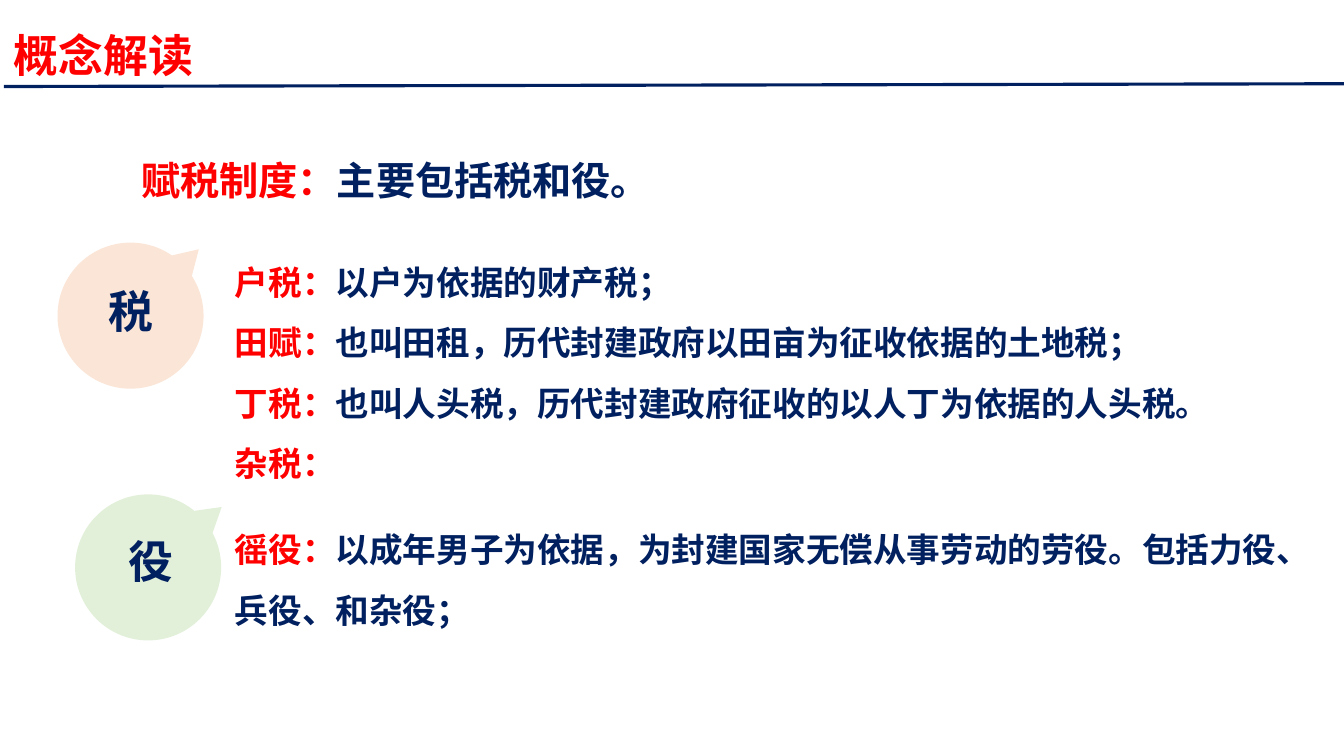
from dataclasses import dataclass
from itertools import pairwise
from math import cos, radians, sin, tan

from lxml import etree
from pptx import Presentation
from pptx.dml.color import RGBColor
from pptx.enum.shapes import MSO_CONNECTOR
from pptx.enum.text import MSO_ANCHOR, MSO_AUTO_SIZE, PP_ALIGN
from pptx.oxml.ns import qn
from pptx.shapes.autoshape import Shape
from pptx.slide import Slide
from pptx.util import Cm, Pt

RED = RGBColor(0xFF, 0x00, 0x00)
NAVY = RGBColor(0x00, 0x20, 0x60)
PEACH = RGBColor(0xFB, 0xE5, 0xD6)
GREEN = RGBColor(0xE2, 0xF0, 0xD9)

STRAIGHT = MSO_CONNECTOR.STRAIGHT
LEFT = PP_ALIGN.LEFT
CENTER = PP_ALIGN.CENTER
TOP = MSO_ANCHOR.TOP
MIDDLE = MSO_ANCHOR.MIDDLE
NO_FIT = MSO_AUTO_SIZE.NONE
GROW = MSO_AUTO_SIZE.SHAPE_TO_FIT_TEXT

BODY_FONT = "Noto Sans CJK SC"
TITLE_FONT = "Noto Sans CJK JP"
BUBBLE_RADIUS = 1.84
TIP_DISTANCE = 2.4
ARC_ANGLES = (-78.7, 0, 90, 180, 258.7)


@dataclass(frozen=True)
class Piece:
    text: str
    color: RGBColor


@dataclass(frozen=True)
class TextBlock:
    left: float
    top: float
    width: float
    height: float
    size: int
    paragraphs: list[list[Piece]]
    font: str = BODY_FONT
    line_spacing: float = 1.5
    wrap: bool = True
    align: PP_ALIGN = LEFT
    anchor: MSO_ANCHOR = TOP
    auto_size: MSO_AUTO_SIZE = GROW


@dataclass(frozen=True)
class Bubble:
    left: float
    top: float
    rotation: float
    fill: RGBColor
    label: str
    label_left: float
    label_top: float


def term(name: str, meaning: str = "") -> list[Piece]:
    pieces = [Piece(name, RED)]
    if meaning:
        pieces.append(Piece(meaning, NAVY))
    return pieces


TITLE = TextBlock(0.1, 0.57, 5.08, 1.62, 32, [term("概念解读")],
                  font=TITLE_FONT, line_spacing=1.0, wrap=False)
SYSTEM = TextBlock(3.31, 3.23, 14.35, 1.8, 28,
                   [term("赋税制度：", "主要包括税和役。")])
TAXES = TextBlock(5.67, 5.96, 26.04, 6.17, 24, [
    term("户税：", "以户为依据的财产税；"),
    term("田赋：", "也叫田租，历代封建政府以田亩为征收依据的土地税；"),
    term("丁税：", "也叫人头税，历代封建政府征收的以人丁为依据的人头税。"),
    term("杂税："),
])
LABOUR = TextBlock(5.67, 12.7, 27.36, 3.33, 24, [
    term("徭役：", "以成年男子为依据，为封建国家无偿从事劳动的劳役。"
         "包括力役、兵役、和杂役；"),
])
BUBBLES = [
    Bubble(1.65, 5.64, 45.8, PEACH, "税", 2.11, 7.14),
    Bubble(2.11, 12.0, 50.6, GREEN, "役", 2.61, 13.44),
]


def add_text(slide: Slide, block: TextBlock) -> None:
    box = slide.shapes.add_textbox(Cm(block.left), Cm(block.top),
                                   Cm(block.width), Cm(block.height))
    frame = box.text_frame
    frame.word_wrap = block.wrap
    frame.auto_size = block.auto_size
    frame.vertical_anchor = block.anchor
    for index, pieces in enumerate(block.paragraphs):
        paragraph = frame.add_paragraph() if index else frame.paragraphs[0]
        paragraph.alignment = block.align
        paragraph.line_spacing = block.line_spacing
        for piece in pieces:
            run = paragraph.add_run()
            run.text = piece.text
            run.font.name = block.font
            run.font.size = Pt(block.size)
            run.font.bold = True
            run.font.color.rgb = piece.color
            east_asian = etree.SubElement(run.font._element, qn("a:ea"))
            east_asian.set("typeface", block.font)


def curve_after_first_line(shape: Shape) -> None:
    lines = list(shape._element.iter(qn("a:lnTo")))[1:]
    for first in range(0, len(lines), 3):
        triple = lines[first:first + 3]
        curve = etree.Element(qn("a:cubicBezTo"))
        triple[0].addprevious(curve)
        for line in triple:
            curve.append(line[0])
            line.getparent().remove(line)


def add_bubble(slide: Slide, bubble: Bubble) -> None:
    center_x = bubble.left + BUBBLE_RADIUS
    center_y = bubble.top + TIP_DISTANCE

    def point(angle: float, tangent: float = 0) -> tuple[int, int]:
        cosine, sine = cos(radians(angle)), sin(radians(angle))
        return (Cm(center_x + BUBBLE_RADIUS * (cosine - tangent * sine)),
                Cm(center_y + BUBBLE_RADIUS * (sine + tangent * cosine)))

    outline = [point(ARC_ANGLES[0])]
    for start, end in pairwise(ARC_ANGLES):
        handle = 4 / 3 * tan(radians(end - start) / 4)
        outline += [point(start, handle), point(end, -handle), point(end)]
    builder = slide.shapes.build_freeform(Cm(center_x), Cm(bubble.top))
    builder.add_line_segments(outline, close=True)
    shape = builder.convert_to_shape()
    curve_after_first_line(shape)
    shape.rotation = bubble.rotation
    shape.shadow.inherit = False
    shape.fill.solid()
    shape.fill.fore_color.rgb = bubble.fill
    shape.line.fill.background()
    add_text(slide, TextBlock(
        bubble.label_left, bubble.label_top, 2.39, 1.37, 32,
        [[Piece(bubble.label, NAVY)]], line_spacing=1.0, wrap=False,
        align=CENTER, anchor=MIDDLE, auto_size=NO_FIT))


def add_title_rule(slide: Slide) -> None:
    rule = slide.shapes.add_connector(STRAIGHT, Cm(0.1), Cm(2.18),
                                      Cm(33.87), Cm(2.11))
    rule.line.color.rgb = NAVY
    rule.line.width = Pt(2.25)
    etree.SubElement(rule._element.spPr, qn("a:effectLst"))


def main() -> None:
    presentation = Presentation()
    presentation.slide_width = Cm(33.87)
    presentation.slide_height = Cm(19.05)
    slide = presentation.slides.add_slide(presentation.slide_layouts[6])
    add_text(slide, TAXES)
    for bubble in BUBBLES:
        add_bubble(slide, bubble)
    add_title_rule(slide)
    for block in (SYSTEM, LABOUR, TITLE):
        add_text(slide, block)
    presentation.save("out.pptx")


if __name__ == "__main__":
    main()
